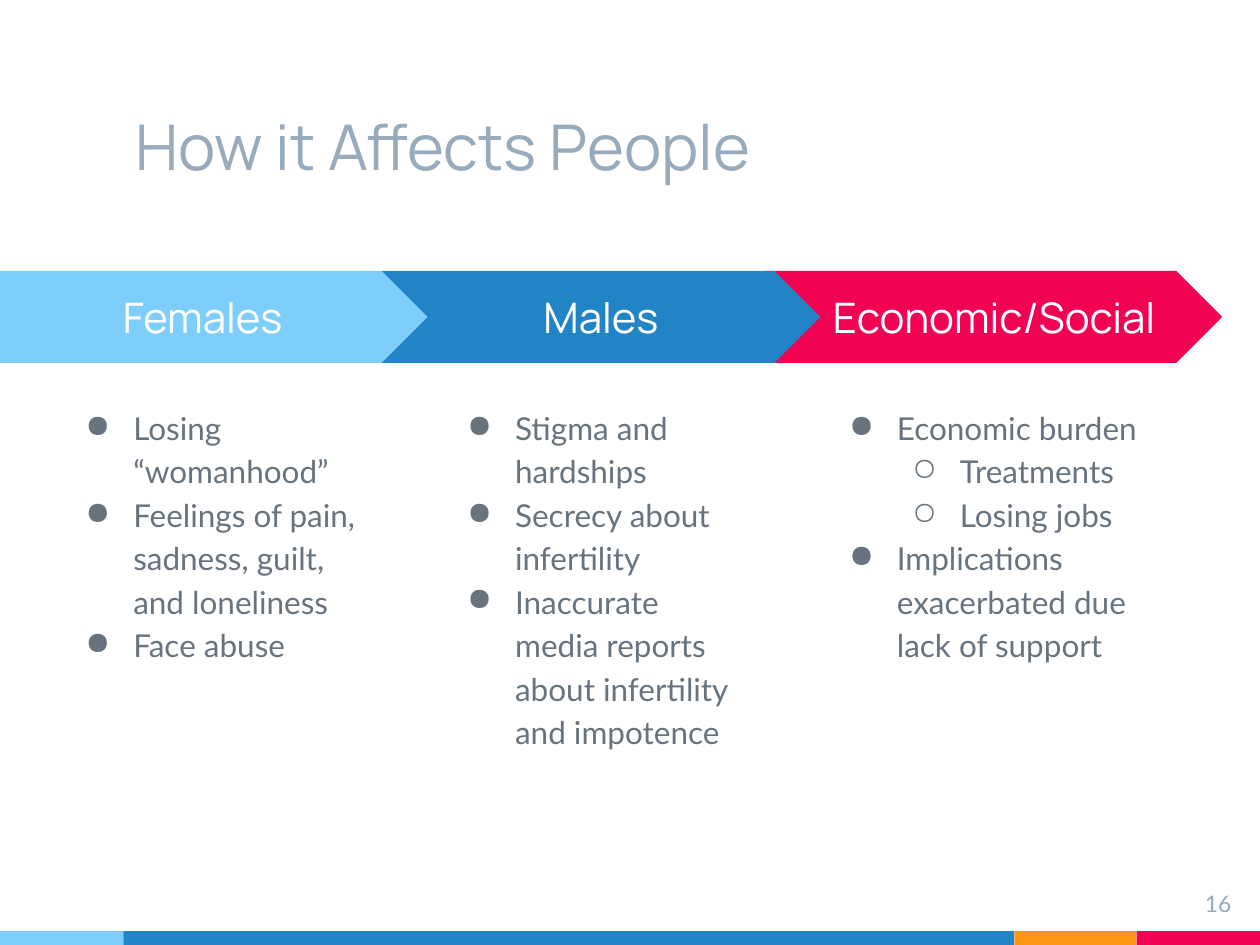
"""Build the slide "How it Affects People" with three arrow-headed columns."""
from dataclasses import dataclass

import lxml.etree
import pptx
import pptx.dml.color
import pptx.enum.shapes
import pptx.enum.text
import pptx.oxml.ns
import pptx.util

Inches = pptx.util.Inches
Shapes = pptx.enum.shapes.MSO_SHAPE
Align = pptx.enum.text.PP_ALIGN
Anchor = pptx.enum.text.MSO_ANCHOR


@dataclass(frozen=True)
class Theme:
    sky: str = "7ECEFD"
    blue: str = "2185C5"
    orange: str = "FF9715"
    red: str = "F20253"
    white: str = "FFFFFF"
    muted: str = "97ABBC"
    body: str = "677480"
    heading_font: str = "Manrope"
    body_font: str = "Lato"
    title_size: int = 36
    heading_size: int = 24
    body_size: int = 18
    number_size: int = 13


THEME = Theme()
BULLETS = ("●", "○")
FOOTER = ((THEME.sky, 0.98), (THEME.blue, 7.07), (THEME.orange, 0.97), (THEME.red, 0.98))
COLUMNS = (
    ("Economic/Social", Shapes.CHEVRON, THEME.red, (6.08, 3.62), (6.52, 2.73),
     (("Economic burden", 0), ("Treatments", 1), ("Losing jobs", 1),
      ("Implications exacerbated due lack of support", 0))),
    ("Females", Shapes.PENTAGON, THEME.sky, (0, 3.4), (0.46, 2.47),
     (("Losing “womanhood”", 0), ("Feelings of pain, sadness, guilt, and loneliness", 0),
      ("Face abuse", 0))),
    ("Males", Shapes.CHEVRON, THEME.blue, (3.03, 3.48), (3.49, 2.56),
     (("Stigma and hardships", 0), ("Secrecy about infertility", 0),
      ("Inaccurate media reports about infertility and impotence", 0))),
)


def rgb(color):
    return pptx.dml.color.RGBColor.from_string(color)


def style_paragraph(paragraph, font, size, color, align=Align.LEFT):
    paragraph.alignment = align
    paragraph.font.name = font
    paragraph.font.size = pptx.util.Pt(size)
    paragraph.font.color.rgb = rgb(color)


def set_frame(shape, anchor):
    frame = shape.text_frame
    frame.word_wrap = True
    frame.vertical_anchor = anchor
    frame.margin_left = frame.margin_right = Inches(0.1)
    frame.margin_top = frame.margin_bottom = Inches(0.1)
    return frame


def add_text_box(slide, box, anchor=Anchor.TOP):
    shape = slide.shapes.add_textbox(*map(Inches, box))
    return set_frame(shape, anchor)


def add_filled_shape(slide, kind, box, color):
    shape = slide.shapes.add_shape(kind, *map(Inches, box))
    shape.shadow.inherit = False
    shape.fill.solid()
    shape.fill.fore_color.rgb = rgb(color)
    shape.line.fill.background()
    return shape


def add_footer(slide):
    left = 0
    for color, width in FOOTER:
        add_filled_shape(slide, Shapes.RECTANGLE, (left, 7.39, width, 0.11), color)
        left += width


def add_line(slide, text, box, font, size, align=Align.LEFT, anchor=Anchor.TOP):
    paragraph = add_text_box(slide, box, anchor).paragraphs[0]
    paragraph.text = text
    style_paragraph(paragraph, font, size, THEME.muted, align)


def add_arrow(slide, text, kind, color, left, width):
    shape = add_filled_shape(slide, kind, (left, 2.15, width, 0.73), color)
    shape.adjustments[0] = 0.5
    paragraph = set_frame(shape, Anchor.MIDDLE).paragraphs[0]
    paragraph.text = text
    style_paragraph(paragraph, THEME.heading_font, THEME.heading_size, THEME.white, Align.CENTER)


def set_bullet(paragraph, level):
    qn = pptx.oxml.ns.qn
    properties = paragraph._p.get_or_add_pPr()
    properties.set("marL", str(Inches(0.5 * (level + 1))))
    properties.set("indent", str(Inches(-0.38)))
    color = lxml.etree.SubElement(properties, qn("a:buClr"))
    lxml.etree.SubElement(color, qn("a:srgbClr"), val=THEME.body)
    lxml.etree.SubElement(properties, qn("a:buChar"), char=BULLETS[level])


def add_bullet_list(slide, items, left, width):
    frame = add_text_box(slide, (left, 3.1, width, 2.86))
    for index, (text, level) in enumerate(items):
        paragraph = frame.add_paragraph() if index else frame.paragraphs[0]
        paragraph.text = text
        paragraph.level = level
        paragraph.line_spacing = 1.15
        set_bullet(paragraph, level)
        style_paragraph(paragraph, THEME.body_font, THEME.body_size, THEME.body)


def main():
    presentation = pptx.Presentation()
    presentation.slide_width = Inches(10)
    presentation.slide_height = Inches(7.5)
    slide = presentation.slides.add_slide(presentation.slide_layouts[6])
    add_footer(slide)
    add_line(slide, "How it Affects People", (0.98, 0.3, 7.07, 1.25),
             THEME.heading_font, THEME.title_size, anchor=Anchor.BOTTOM)
    for heading, kind, color, arrow_span, list_span, items in COLUMNS:
        add_arrow(slide, heading, kind, color, *arrow_span)
        add_bullet_list(slide, items, *list_span)
    add_line(slide, "16", (9.27, 6.96, 0.6, 0.46),
             THEME.body_font, THEME.number_size, Align.RIGHT)
    presentation.save("out.pptx")


if __name__ == "__main__":
    main()
